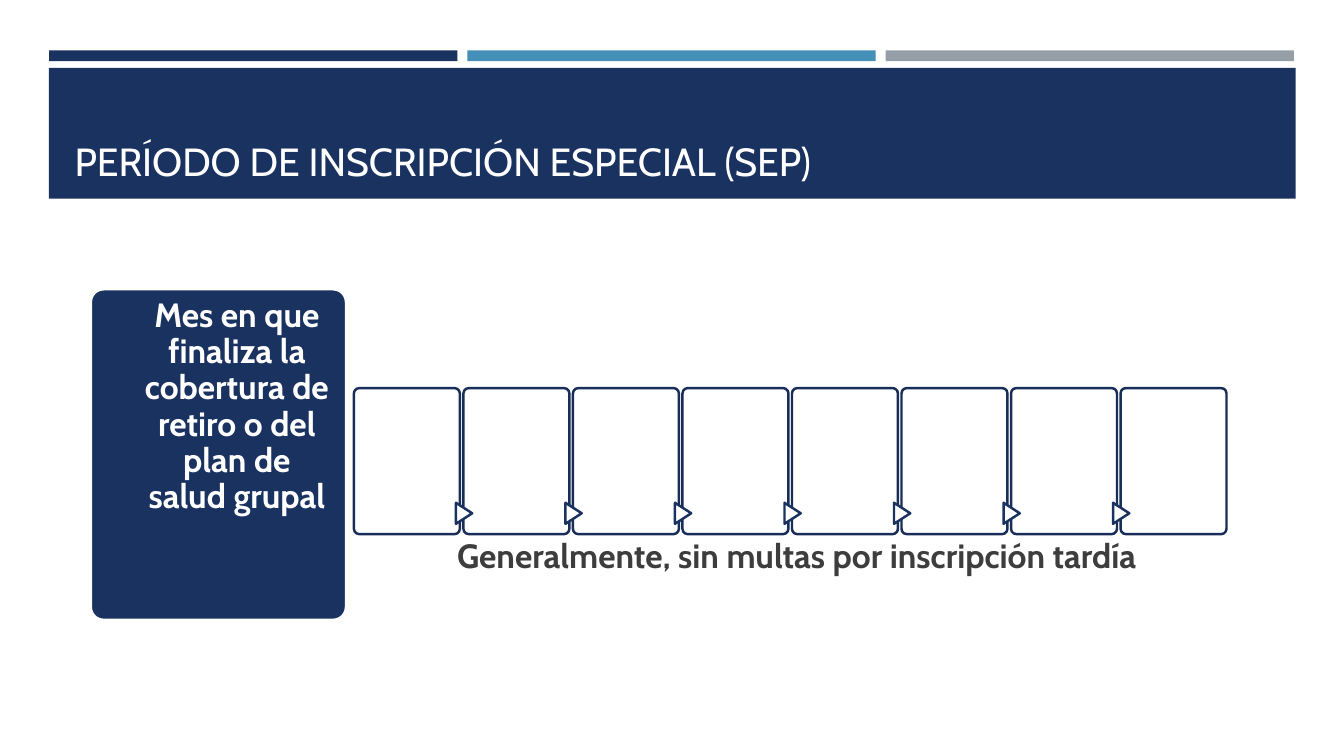
from pptx import Presentation
from pptx.dml.color import RGBColor
from pptx.enum import shapes, text
from pptx.util import Cm, Pt

COLORS = {"navy": "1A3260", "outline": "182D57", "blue": "4590B8",
          "gray": "969FA7", "white": "FFFFFF", "dark": "3D3D3D"}
MSO = shapes.MSO_SHAPE

prs = Presentation()
prs.slide_width, prs.slide_height = Cm(33.87), Cm(19.05)
s = prs.slides.add_slide(prs.slide_layouts[6])


def add_box(kind, left, top, width, height, fill, line=None):
    sp = s.shapes.add_shape(kind, Cm(left), Cm(top), Cm(width), Cm(height))
    sp.shadow.inherit = False
    sp.fill.solid()
    sp.fill.fore_color.rgb = RGBColor.from_string(COLORS[fill])
    if line:
        sp.line.color.rgb = RGBColor.from_string(COLORS[line])
        sp.line.width = Pt(1.75)
    else:
        sp.line.fill.background()
    if kind == MSO.ROUNDED_RECTANGLE:
        sp.adjustments[0] = 0.05
    return sp


def add_label(words, left, top, width, height, size, color, bold=True):
    sp = s.shapes.add_textbox(Cm(left), Cm(top), Cm(width), Cm(height))
    tf = sp.text_frame
    tf.word_wrap = True
    tf.text = words
    p = tf.paragraphs[0]
    p.alignment = text.PP_ALIGN.CENTER
    font = p.runs[0].font
    font.name, font.size, font.bold = "Cabin", Pt(size), bold
    font.color.rgb = RGBColor.from_string(COLORS[color])
    return tf


# Header
for i, color in enumerate(("navy", "blue", "gray")):
    add_box(MSO.RECTANGLE, 1.24 + 10.54 * i, 1.27, 10.29, 0.27, color)
add_box(MSO.RECTANGLE, 1.23, 1.71, 31.42, 3.3, "navy")
title = add_label("PERÍODO DE INSCRIPCIÓN ESPECIAL (SEP)",
                  1.63, 1.96, 30.63, 2.82, 28, "white", bold=False)
title.vertical_anchor = text.MSO_ANCHOR.BOTTOM
title.paragraphs[0].alignment = text.PP_ALIGN.LEFT

# Month boxes, with an arrow into each one after the first
for i in range(8):
    left = 8.92 + 2.76 * i
    add_box(MSO.ROUNDED_RECTANGLE, left, 9.78, 2.67, 3.68, "white", "outline")
    if i:
        arrow = add_box(MSO.FLOWCHART_EXTRACT, left - 0.25, 12.73, 0.53, 0.41,
                        "white", "navy")
        arrow.rotation = 90

# Starting month
add_box(MSO.ROUNDED_RECTANGLE, 2.29, 7.29, 6.43, 8.33, "navy", "white")
month = add_label("Mes en que finaliza la cobertura de retiro o del plan de salud grupal",
                  3.58, 7.29, 4.78, 8.33, 24, "white")
month.margin_left = month.margin_right = month.margin_bottom = 0
month.margin_top = Cm(0.23)
month.paragraphs[0].line_spacing = 0.9

add_label("Generalmente, sin multas por inscripción tardía",
          8.38, 13.36, 23.39, 1.27, 24, "dark")

prs.save("out.pptx")
